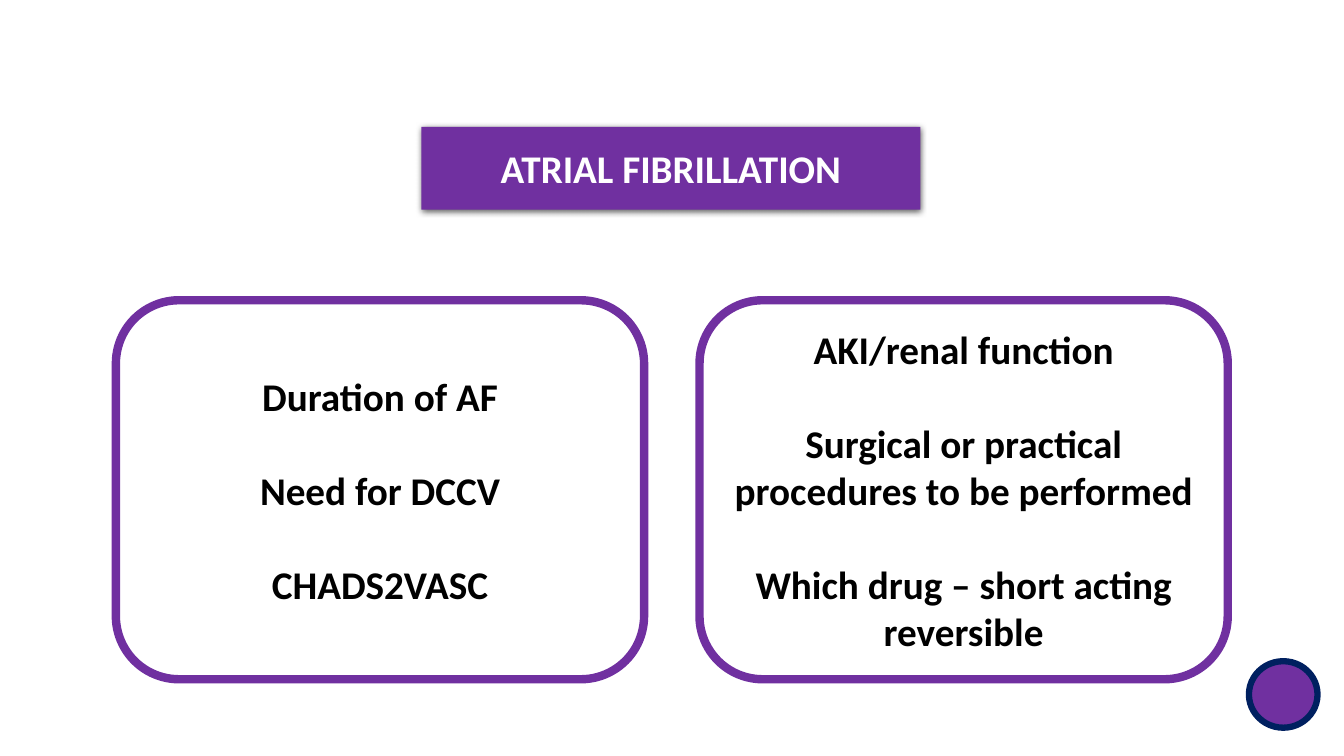
from dataclasses import dataclass

from lxml.etree import SubElement
from pptx import Presentation
from pptx.dml.color import RGBColor
from pptx.enum.shapes import MSO_SHAPE as Preset
from pptx.enum.text import MSO_ANCHOR as Anchor, MSO_AUTO_SIZE as AutoSize, PP_ALIGN as Align
from pptx.oxml.ns import qn
from pptx.shapes.base import BaseShape
from pptx.slide import Slide
from pptx.util import Pt

PURPLE, NAVY, BLACK, WHITE = "7030A0", "002060", "000000", "FFFFFF"
FONT, TEXT_SIZE, LINE_GAP = "Calibri", 28, 33.5
CARD_TOP, CARD_WIDTH, CARD_HEIGHT = 214.5, 377.3, 270.7


@dataclass
class Card:
    left: float
    lines: tuple[str, ...]


CARDS = (
    Card(82.8, ("Duration of AF", "Need for DCCV", "CHADS2VASC")),
    Card(499.7, (
        "AKI/renal function",
        "Surgical or practical procedures to be performed",
        "Which drug – short acting reversible",
    )),
)


def color(value: str) -> RGBColor:
    return RGBColor.from_string(value)


def write_lines(shape: BaseShape, lines: tuple[str, ...], text_color: str) -> None:
    frame = shape.text_frame
    frame.word_wrap = True
    frame.auto_size = AutoSize.NONE
    frame.vertical_anchor = Anchor.MIDDLE
    for index, line in enumerate(lines):
        paragraph = frame.add_paragraph() if index else frame.paragraphs[0]
        paragraph.alignment = Align.CENTER
        paragraph.space_before = Pt(LINE_GAP if index else 0)
        run = paragraph.add_run()
        run.text = line
        run.font.name = FONT
        run.font.size = Pt(TEXT_SIZE)
        run.font.bold = True
        run.font.color.rgb = color(text_color)


def add_outlined(slide: Slide, preset: Preset, left: float, top: float, width: float,
                 height: float, line: str, weight: float) -> BaseShape:
    shape = slide.shapes.add_shape(preset, Pt(left), Pt(top), Pt(width), Pt(height))
    shape.shadow.inherit = False
    shape.fill.background()
    shape.line.color.rgb = color(line)
    shape.line.width = Pt(weight)
    return shape


def add_shadow(shape: BaseShape) -> None:
    effects = SubElement(shape._element.spPr, qn("a:effectLst"))
    shadow = SubElement(effects, qn("a:outerShdw"), blurRad=str(Pt(4.5)), dist=str(Pt(1.5)),
                        dir="5400000", rotWithShape="0")
    shade = SubElement(shadow, qn("a:srgbClr"), val=BLACK)
    SubElement(shade, qn("a:alpha"), val="63000")


def format_title(title: BaseShape) -> None:
    title.left, title.top, title.width, title.height = Pt(301), Pt(90.7), Pt(356.4), Pt(59)
    geometry = SubElement(title._element.spPr, qn("a:prstGeom"), prst="roundRect")
    SubElement(geometry, qn("a:avLst"))
    title.fill.solid()
    title.fill.fore_color.rgb = color(PURPLE)
    add_shadow(title)
    write_lines(title, ("ATRIAL FIBRILLATION",), WHITE)


def main() -> None:
    presentation = Presentation()
    presentation.slide_width, presentation.slide_height = Pt(960), Pt(540)
    slide = presentation.slides.add_slide(presentation.slide_layouts[5])

    # Heading
    format_title(slide.shapes.title)

    # Cards with the points to consider
    for card in CARDS:
        shape = add_outlined(slide, Preset.ROUNDED_RECTANGLE, card.left, CARD_TOP,
                             CARD_WIDTH, CARD_HEIGHT, PURPLE, 6)
        write_lines(shape, card.lines, BLACK)

    # Corner marker
    marker = add_outlined(slide, Preset.FLOWCHART_CONNECTOR, 892.1, 472.3, 49, 47.5, NAVY, 4.5)
    marker.fill.solid()
    marker.fill.fore_color.rgb = color(PURPLE)

    presentation.save("out.pptx")


if __name__ == "__main__":
    main()
